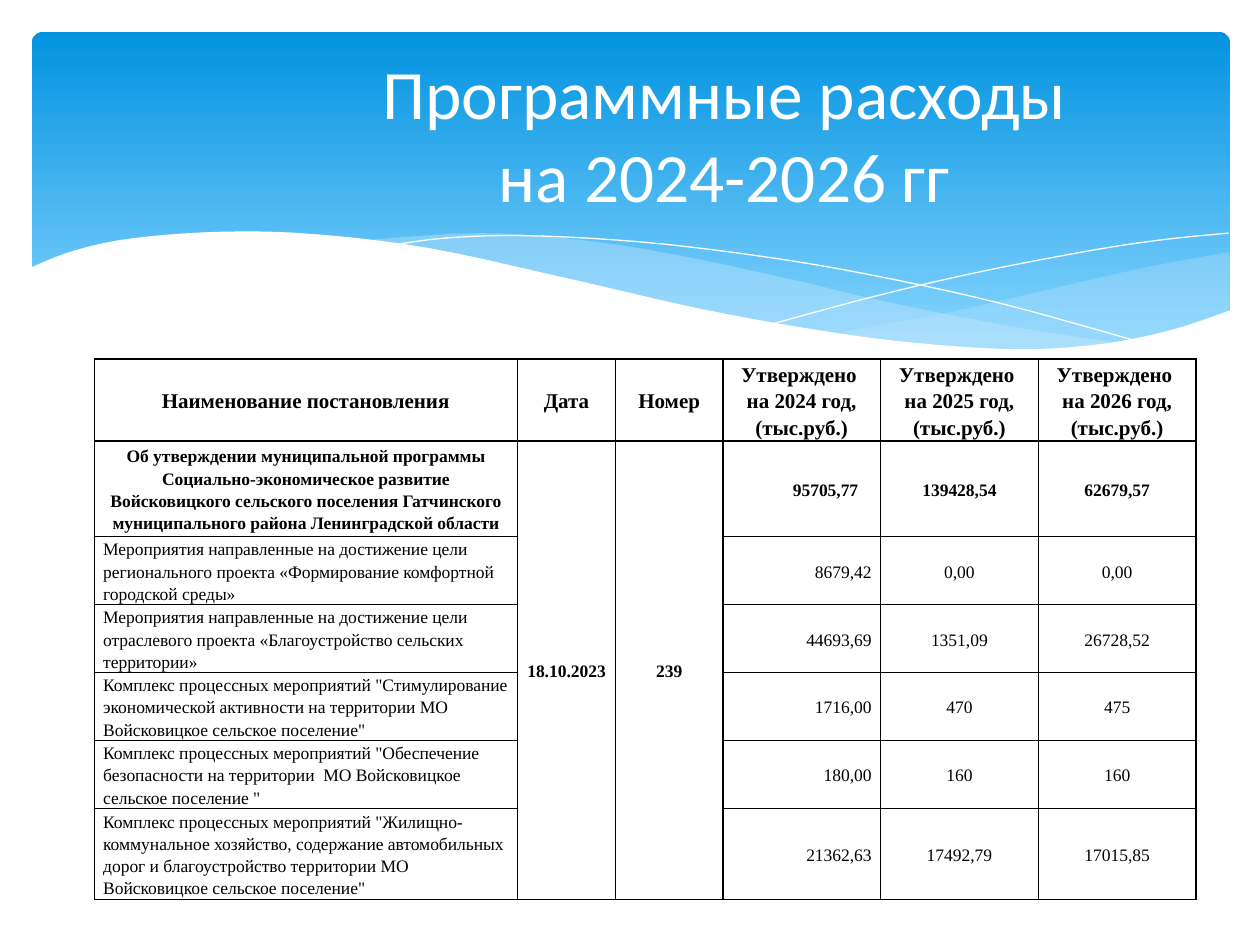
"""Build the slide on programme spending for 2024-2026."""
from dataclasses import dataclass
from typing import NamedTuple

from lxml.etree import SubElement
from pptx import Presentation
from pptx.dml.color import RGBColor
from pptx.enum.shapes import MSO_SHAPE
from pptx.enum.text import MSO_ANCHOR, PP_ALIGN
from pptx.oxml import parse_xml
from pptx.oxml.ns import nsdecls, qn
from pptx.util import Cm, Pt

WHITE = RGBColor(0xFF, 0xFF, 0xFF)
BLACK = RGBColor(0x00, 0x00, 0x00)
SKY_TOP = RGBColor(0x02, 0x93, 0xE0)
SKY_BOTTOM = RGBColor(0x83, 0xD3, 0xFE)
MIST = RGBColor(0xC6, 0xE7, 0xFC)

Edge = list[tuple[float, float]]


@dataclass
class Wave:
    """A filled outline, or a thin open line when it has no opacity."""
    edges: list[Edge]
    color: RGBColor = MIST
    opacity: int | None = None


class Entry(NamedTuple):
    name: str
    amounts: tuple[str, str, str]


WAVES = [
    Wave([[(24.79, 5.08), (23.01, 5.41), (21.13, 5.84), (19.13, 6.3), (16.79, 6.73)],
          [(16.79, 6.73), (18.26, 6.91), (19.53, 7.04), (20.68, 7.06), (21.92, 6.99),
           (23.19, 6.78), (24.1, 6.53), (24.79, 6.27)]], opacity=29),
    Wave([[(22.68, 6.93), (20.5, 6.6), (17.93, 6.1), (15.98, 5.64), (13.74, 5.16),
           (11.81, 4.85), (9.65, 4.7), (7.26, 4.85)],
          [(7.26, 4.85), (9.19, 5.16), (11.4, 5.64), (13.46, 6.1), (15.7, 6.55),
           (17.65, 6.86), (19.63, 7.04), (21.29, 7.06), (22.68, 6.93)]], opacity=40),
    Wave([[(7.85, 4.95), (8.97, 4.8), (10.57, 4.75), (12.95, 4.88), (15.44, 5.18),
           (17.65, 5.56), (20.19, 6.12), (23.04, 6.91)]], WHITE),
    Wave([[(15.57, 6.53), (17.65, 5.97), (19.71, 5.49), (22, 5.05), (23.47, 4.83),
           (24.77, 4.7)]], WHITE),
    Wave([[(0.58, 5.41), (1.5, 5.05), (2.69, 4.8), (4.5, 4.67), (6.35, 4.72), (8.64, 5),
           (11.35, 5.59), (14.1, 6.22), (16.46, 6.65), (18.44, 6.91), (20.55, 7.04),
           (22.23, 6.93), (23.62, 6.65), (24.82, 6.25)],
          [(24.82, 8.36), (0.58, 8.36)]], WHITE, 100),
]
TITLE = ["Программные расходы", "на 2024-2026 гг"]
HEADINGS = ["Наименование постановления", "Дата", "Номер"] + [
    f"Утверждено  на {year} год, (тыс.руб.)" for year in (2024, 2025, 2026)]
DECREE = ("18.10.2023", "239")
ENTRIES = [
    Entry("Об утверждении муниципальной программы Социально-экономическое развитие "
          "Войсковицкого сельского поселения Гатчинского муниципального района "
          "Ленинградской области", ("95705,77", "139428,54", "62679,57")),
    Entry("Мероприятия направленные на достижение цели регионального проекта "
          "«Формирование комфортной городской среды»", ("8679,42", "0,00", "0,00")),
    Entry("Мероприятия направленные на достижение цели отраслевого проекта "
          "«Благоустройство сельских территории»", ("44693,69", "1351,09", "26728,52")),
    Entry('Комплекс процессных мероприятий "Стимулирование экономической активности '
          'на территории МО Войсковицкое сельское поселение"', ("1716,00", "470", "475")),
    Entry('Комплекс процессных мероприятий "Обеспечение безопасности на территории  '
          'МО Войсковицкое сельское поселение "', ("180,00", "160", "160")),
    Entry('Комплекс процессных мероприятий "Жилищно-коммунальное хозяйство, содержание '
          'автомобильных дорог и благоустройство территории МО Войсковицкое сельское '
          'поселение"', ("21362,63", "17492,79", "17015,85")),
]
COLUMN_WIDTHS = [8.53, 1.98, 2.16] + [3.18] * 3
ROW_HEIGHTS = [1.65, 1.93] + [1.37] * 4 + [1.83]


def write(para, text: str, *, size: float, font: str = "Times New Roman",
          color: RGBColor = BLACK, bold: bool = False,
          align: PP_ALIGN = PP_ALIGN.CENTER, spacing: float = 1.0) -> None:
    """Write formatted text into a paragraph."""
    para.alignment = align
    para.line_spacing = spacing
    span = para.add_run()
    span.text = text
    span.font.name = font
    span.font.size = Pt(size)
    span.font.bold = bold
    span.font.color.rgb = color


def smooth(edge: Edge, steps: int = 5) -> Edge:
    """Return points of a Catmull-Rom curve through an edge."""
    padded = [edge[0], *edge, edge[-1]]
    points = [edge[0]]
    for a, b, c, d in zip(padded, padded[1:], padded[2:], padded[3:]):
        for step in range(1, steps + 1):
            t = step / steps
            points.append(tuple(
                (2 * q + (r - p) * t + (2 * p - 5 * q + 4 * r - s) * t ** 2
                 + (3 * q - p - 3 * r + s) * t ** 3) / 2
                for p, q, r, s in zip(a, b, c, d)))
    return points


def draw_wave(page, wave: Wave) -> None:
    """Draw one wave of the header."""
    points = [(Cm(x), Cm(y)) for edge in wave.edges for x, y in smooth(edge)]
    closed = wave.opacity is not None
    builder = page.shapes.build_freeform(*points[0])
    builder.add_line_segments(points[1:], close=closed)
    shape = builder.convert_to_shape()
    shape.shadow.inherit = False
    if closed:
        shape.fill.solid()
        shape.fill.fore_color.rgb = wave.color
        shape.line.fill.background()
        color = shape.fill._xPr.find(qn("a:solidFill"))[0]
        SubElement(color, qn("a:alpha"), val=str(wave.opacity * 1000))
    else:
        shape.fill.background()
        shape.line.color.rgb = wave.color
        shape.line.width = Pt(0)


def draw_sky(page) -> None:
    """Draw the gradient panel behind the title."""
    sky = page.shapes.add_shape(
        MSO_SHAPE.ROUNDED_RECTANGLE, Cm(0.64), Cm(0.64), Cm(24.16), Cm(6.86))
    sky.adjustments[0] = 0.034
    sky.shadow.inherit = False
    sky.line.fill.background()
    sky.fill.gradient()
    sky.fill.gradient_angle = 270
    for stop, color, position in zip(
            sky.fill.gradient_stops, (SKY_TOP, SKY_BOTTOM), (0, 0.9)):
        stop.color.rgb = color
        stop.position = position


def place_title(page) -> None:
    """Move the title in front of the header and fill it."""
    box = page.shapes.title
    page.shapes._spTree.append(box._element)
    box.left, box.top, box.width, box.height = Cm(1.27), Cm(0.94), Cm(22.86), Cm(3.48)
    frame = box.text_frame
    frame.word_wrap = True
    frame.vertical_anchor = MSO_ANCHOR.MIDDLE
    frame.margin_left = Cm(4.06)
    for index, line in enumerate(TITLE):
        para = frame.add_paragraph() if index else frame.paragraphs[0]
        write(para, line, size=39.6, font="Calibri", color=WHITE)


def style_cell(cell) -> None:
    """Give a cell its fill, insets and borders."""
    cell.fill.solid()
    cell.fill.fore_color.rgb = WHITE
    cell.vertical_anchor = MSO_ANCHOR.MIDDLE
    cell.margin_left = cell.margin_right = Cm(0.18)
    cell.margin_top = cell.margin_bottom = Cm(0)
    properties = cell._tc.get_or_add_tcPr()
    for index, side in enumerate(("lnL", "lnR", "lnT", "lnB")):
        properties.insert(index, parse_xml(
            f'<a:{side} {nsdecls("a")} w="{Pt(1)}"><a:solidFill>'
            f'<a:srgbClr val="{BLACK}"/></a:solidFill></a:{side}>'))


def draw_table(page) -> None:
    """Draw the table of spending by decree."""
    table = page.shapes.add_table(
        len(ROW_HEIGHTS), len(COLUMN_WIDTHS), Cm(1.9), Cm(7.24),
        Cm(sum(COLUMN_WIDTHS)), Cm(sum(ROW_HEIGHTS))).table
    for column, width in zip(table.columns, COLUMN_WIDTHS):
        column.width = Cm(width)
    for row, height in zip(table.rows, ROW_HEIGHTS):
        row.height = Cm(height)
    for cell in table.iter_cells():
        style_cell(cell)
    rows = [HEADINGS] + [[entry.name, *(DECREE if index == 0 else ("", "")), *entry.amounts]
                         for index, entry in enumerate(ENTRIES)]
    for r, texts in enumerate(rows):
        for c, text in enumerate(texts):
            if not text:
                continue
            align = PP_ALIGN.CENTER
            if r > 1 and c == 0:
                align = PP_ALIGN.LEFT
            elif r > 0 and c == 3:
                align = PP_ALIGN.RIGHT
            write(table.cell(r, c).text_frame.paragraphs[0], text,
                  size=10 if r else 12, bold=r < 2, align=align, spacing=1.15)
    table.cell(1, 3).margin_right = Cm(0.45)
    for c in (1, 2):
        table.cell(1, c).merge(table.cell(len(ENTRIES), c))


def main() -> None:
    """Build and save the deck."""
    deck = Presentation()
    deck.slide_width, deck.slide_height = Cm(25.4), Cm(19.05)
    page = deck.slides.add_slide(deck.slide_layouts[5])
    draw_sky(page)
    for wave in WAVES:
        draw_wave(page, wave)
    place_title(page)
    draw_table(page)
    deck.save("out.pptx")


if __name__ == "__main__":
    main()
